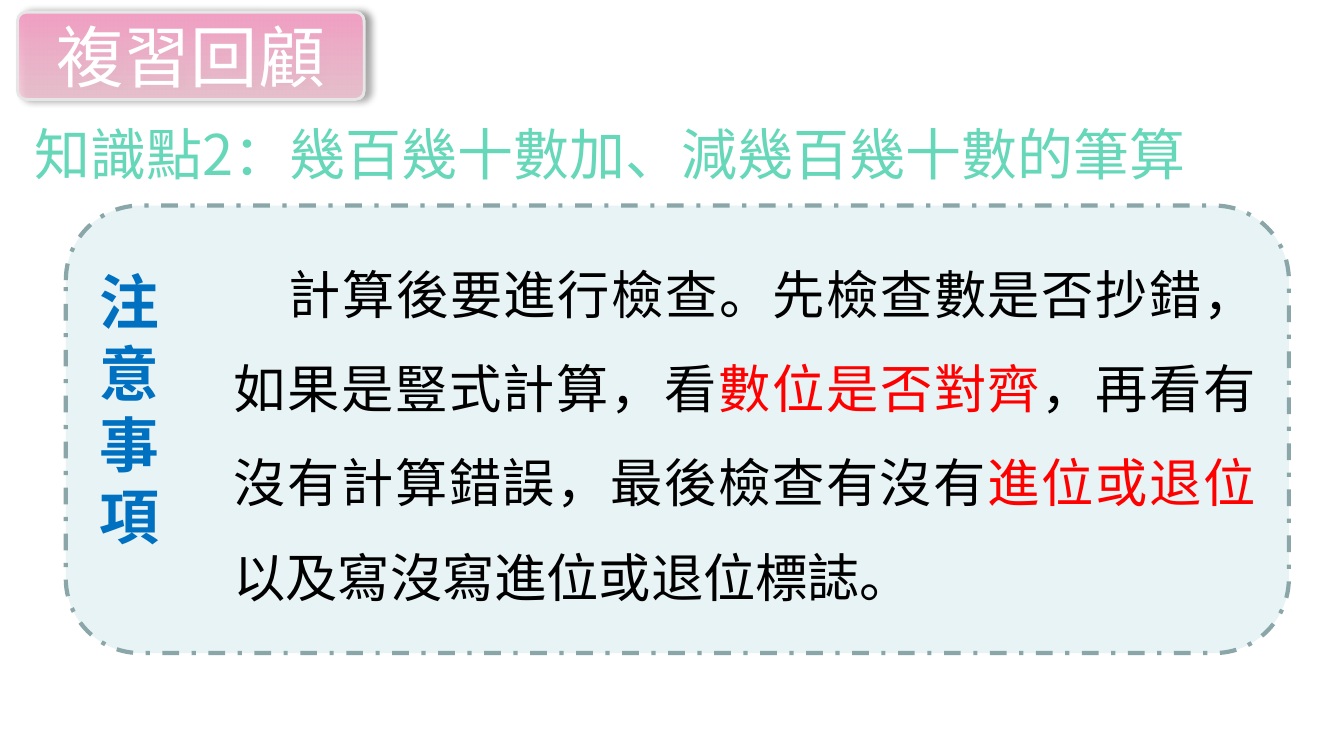
from lxml.etree import SubElement
from pptx import Presentation
from pptx.dml.color import RGBColor
from pptx.enum.dml import MSO_LINE_DASH_STYLE as Dash
from pptx.enum.shapes import MSO_SHAPE as Shape
from pptx.enum.text import MSO_ANCHOR as Anchor, MSO_AUTO_SIZE as AutoSize, PP_ALIGN as Align
from pptx.oxml.ns import qn
from pptx.util import Inches, Pt

SANS, SERIF = "Noto Sans CJK SC", "Times New Roman"
BLACK, RED = "000000", "FF0000"

BANNER = "複習回顧"
HEADING = "知識點2：幾百幾十數加、減幾百幾十數的筆算"
SIDE_LABEL = "注意事項"
ADVICE = [
    ("計算後要進行檢查。先檢查數是否抄錯，如果是豎式計算，看", BLACK),
    ("數位是否對齊", RED),
    ("，再看有沒有計算錯誤，最後檢查有沒有", BLACK),
    ("進位或退位", RED),
    ("以及寫沒寫進位或退位標誌。", BLACK),
]

deck = Presentation()
deck.slide_width = Inches(10)
deck.slide_height = deck.slide_width * 9 // 16
page = deck.slides.add_slide(deck.slide_layouts[6])


def rgb(value):
    return RGBColor.from_string(value)


def add_panel(left, top, width, height, line_color, line_width):
    panel = page.shapes.add_shape(
        Shape.ROUNDED_RECTANGLE, *map(Inches, (left, top, width, height)))
    panel.shadow.inherit = False
    panel.line.color.rgb = rgb(line_color)
    panel.line.width = Pt(line_width)
    return panel


def add_box(left, top, width, height):
    box = page.shapes.add_textbox(*map(Inches, (left, top, width, height)))
    box.text_frame.word_wrap = True
    box.text_frame.auto_size = AutoSize.SHAPE_TO_FIT_TEXT
    return box.text_frame


def write(para, spans, size, font=SANS, bold=False):
    """Fill a paragraph with (text, colour) spans; Chinese letters stay sans."""
    para.font.size, para.font.name, para.font.bold = Pt(size), font, bold
    for text, color in spans:
        span = para.add_run()
        span.text = text
        span.font.color.rgb = rgb(color)
        span.font.name = font
        SubElement(span.font._element, qn("a:ea"), typeface=SANS)


def add_shadow(shape, color, alpha, blur, distance):
    effects = shape._element.spPr.find(qn("a:effectLst"))
    shadow = SubElement(effects, qn("a:outerShdw"), blurRad=str(Pt(blur)),
                        dist=str(Pt(distance)), dir="0", algn="l", rotWithShape="0")
    tint = SubElement(shadow, qn("a:srgbClr"), val=color)
    SubElement(tint, qn("a:alpha"), val=str(alpha * 1000))


card = add_panel(0.49, 1.53, 9.1, 3.33, "8AA6A8", 2.25)
card.fill.solid()
card.fill.fore_color.rgb = rgb("E7F3F4")
card.line.dash_style = Dash.DASH_DOT

banner = add_panel(0.13, 0.09, 2.58, 0.65, "E6E6E6", 1.5)
banner.adjustments[0] = 0.1
banner.fill.gradient()
banner.fill.gradient_angle = 270
for stop, color, position in zip(banner.fill.gradient_stops, ("F2A0C4", "F7C4D5"), (0, 1)):
    stop.color.rgb = rgb(color)
    stop.position = position
last_color = banner._element.spPr.findall(".//" + qn("a:gs"))[-1][0]
SubElement(last_color, qn("a:alpha"), val="75000")
add_shadow(banner, BLACK, alpha=40, blur=4, distance=3)
banner.text_frame.vertical_anchor = Anchor.MIDDLE
title = banner.text_frame.paragraphs[0]
title.alignment = Align.CENTER
write(title, [(BANNER, "FFFFFF")], 36)

advice = add_box(1.64, 1.67, 7.8, 2.93).paragraphs[0]
advice.alignment = Align.JUSTIFY
advice.line_spacing = 1.5
advice._p.get_or_add_pPr().set("indent", str(Inches(0.41)))
write(advice, ADVICE, 28)

side = add_box(0.64, 1.92, 0.88, 2.25)
for index, letter in enumerate(SIDE_LABEL):
    para = side.add_paragraph() if index else side.paragraphs[0]
    write(para, [(letter, "0070C0")], 32, SERIF, bold=True)

heading = add_box(0.16, 0.69, 9.84, 0.76).paragraphs[0]
heading.line_spacing = 1.3
write(heading, [(HEADING, "67D7BA")], 30)

deck.save("out.pptx")
